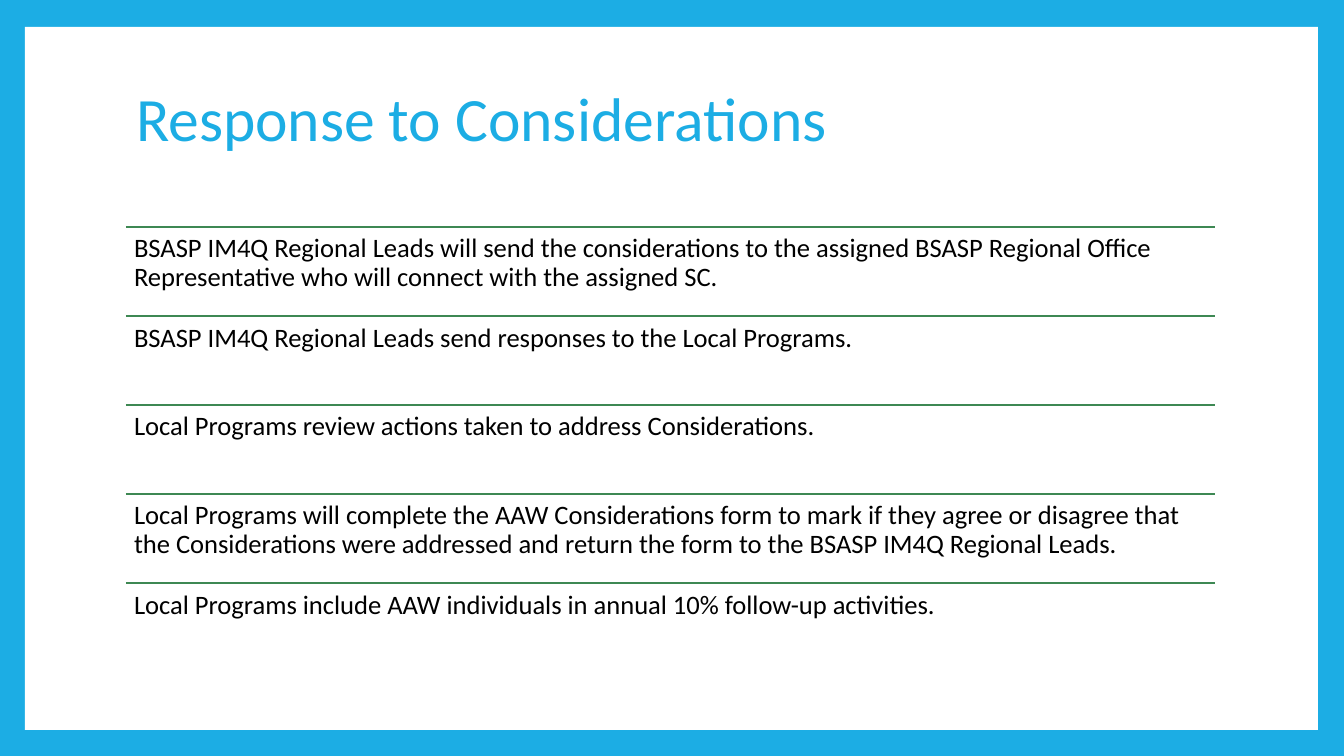
from lxml import etree
from pptx import Presentation
from pptx import util as u
from pptx.dml.color import RGBColor
from pptx.enum import shapes, text
from pptx.oxml.ns import qn

SCALE = 12192000 / 1344  # EMU per px
BLUE = RGBColor(0x1C, 0xAD, 0xE4)
GREEN = RGBColor(0x3E, 0x88, 0x53)
WHITE = RGBColor(0xFF, 0xFF, 0xFF)
BLACK = RGBColor(0, 0, 0)
LEFT, WIDTH = 126, 1089
FIRST_ROW, ROW_HEIGHT, INSET = 227, 89, 8

STEPS = [
    "BSASP IM4Q Regional Leads will send the considerations to the assigned BSASP "
    "Regional Office Representative who will connect with the assigned SC.",
    "BSASP IM4Q Regional Leads send responses to the Local Programs.",
    "Local Programs review actions taken to address Considerations.",
    "Local Programs will complete the AAW Considerations form to mark if they agree "
    "or disagree that the Considerations were addressed and return the form to the "
    "BSASP IM4Q Regional Leads.",
    "Local Programs include AAW individuals in annual 10% follow-up activities.",
]


def px(*lengths):
    """Turn px lengths into EMU."""
    return [u.Emu(round(length * SCALE)) for length in lengths]


def format_paragraph(para, size, color):
    para.alignment = text.PP_ALIGN.LEFT
    para.line_spacing = 0.9
    para.font.name = "Calibri"
    para.font.size = u.Pt(size)
    para.font.color.rgb = color


deck = Presentation()
deck.slide_width, deck.slide_height = px(1344, 756)
page = deck.slides.add_slide(deck.slide_layouts.get_by_name("Title Only"))
page.background.fill.solid()
page.background.fill.fore_color.rgb = BLUE

# White panel, placed behind the title
panel = page.shapes.add_shape(shapes.MSO_SHAPE.RECTANGLE, *px(25, 27, 1293, 703))
panel.shadow.inherit = False
panel.fill.solid()
panel.fill.fore_color.rgb = WHITE
panel.line.fill.background()
title = page.shapes.title
title._element.addprevious(panel._element)

title.left, title.top, title.width, title.height = px(LEFT, 47, WIDTH, 149)
title.text_frame.text = "Response to Considerations"
title.text_frame.auto_size = text.MSO_AUTO_SIZE.NONE
title.text_frame.vertical_anchor = text.MSO_ANCHOR.MIDDLE
format_paragraph(title.text_frame.paragraphs[0], 44, BLUE)

# One ruled row per step
for row, step in enumerate(STEPS):
    top = FIRST_ROW + row * ROW_HEIGHT
    rule = page.shapes.add_connector(
        shapes.MSO_CONNECTOR.STRAIGHT, *px(LEFT, top, LEFT + WIDTH, top))
    rule.line.color.rgb = GREEN
    rule.line.width = u.Pt(1.5)
    etree.SubElement(rule._element.spPr, qn("a:effectLst"))

    box = page.shapes.add_textbox(*px(LEFT, top, WIDTH, ROW_HEIGHT))
    frame = box.text_frame
    frame.word_wrap = True
    frame.margin_left, frame.margin_top, frame.margin_right, frame.margin_bottom = px(*[INSET] * 4)
    frame.text = step
    format_paragraph(frame.paragraphs[0], 19, BLACK)

deck.save("out.pptx")
